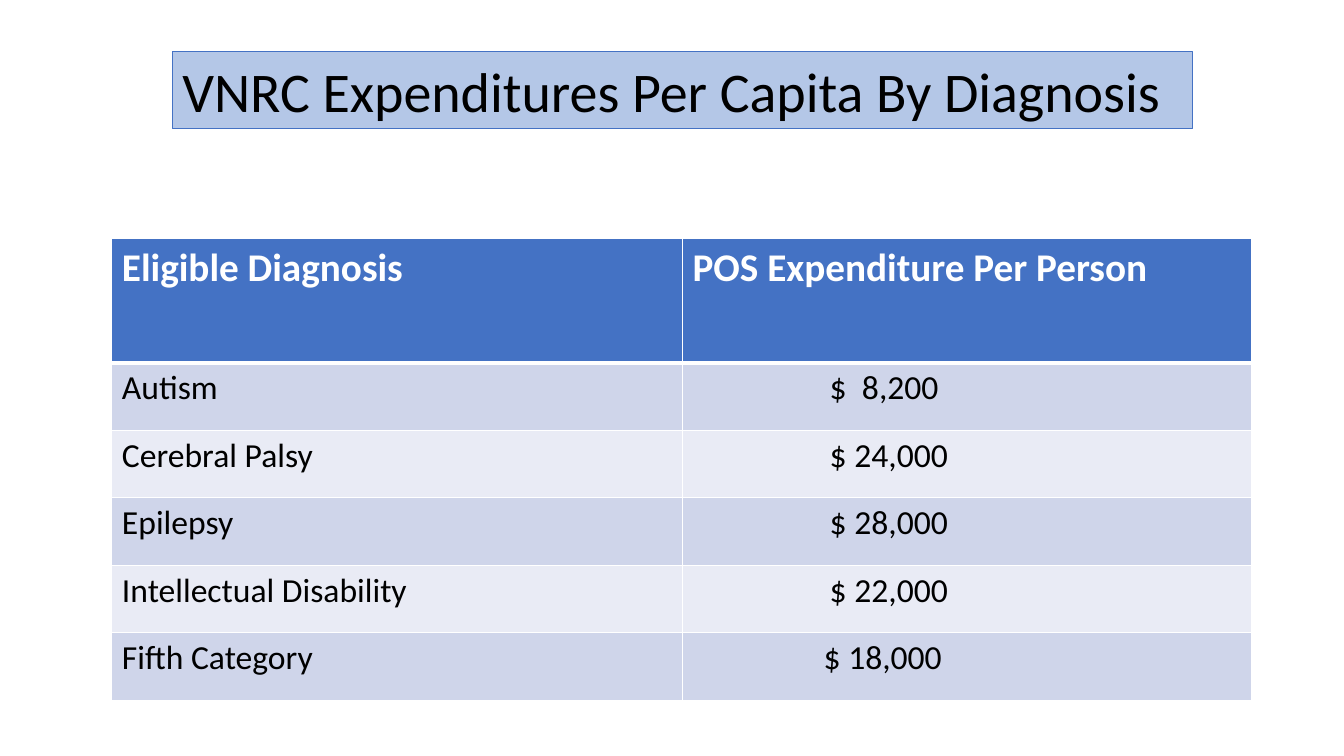
from pptx import Presentation
from pptx.util import Inches, Pt
from pptx.dml.color import RGBColor
from pptx.enum.shapes import MSO_SHAPE as Shape
from pptx.enum.text import MSO_ANCHOR as Anchor, PP_ALIGN as Align
from lxml.etree import SubElement as Sub
from pptx.oxml.ns import qn

TITLE = "VNRC Expenditures Per Capita By Diagnosis"
HEADS = ("Eligible Diagnosis", "POS Expenditure Per Person")
COSTS = [
    ("Autism", "$  8,200", 1.46),
    ("Cerebral Palsy", "$ 24,000", 1.46),
    ("Epilepsy", "$ 28,000", 1.46),
    ("Intellectual Disability", "$ 22,000", 1.46),
    ("Fifth Category", "$ 18,000", 1.4),
]
WIDTHS = (5.66, 5.64)
HEAD_H, ROW_H = 1.23, 0.67
FONT = "Calibri"
BLACK = RGBColor(0x00, 0x00, 0x00)
WHITE = RGBColor(0xFF, 0xFF, 0xFF)
BLUE = RGBColor(0x44, 0x72, 0xC4)
PALE = RGBColor(0xB4, 0xC7, 0xE7)
BANDS = (RGBColor(0xCF, 0xD5, 0xEA), RGBColor(0xE9, 0xEB, 0xF5))


def write(frame, text, size, color, bold=False):
    par = frame.paragraphs[0]
    par.alignment = Align.LEFT
    run = par.add_run()
    run.text = text
    font = run.font
    font.name, font.size, font.bold = FONT, Pt(size), bold
    font.color.rgb = color


def border(cell, top, bottom):
    props = cell._tc.get_or_add_tcPr()
    for side, width in (("L", 1), ("R", 1), ("T", top), ("B", bottom)):
        line = Sub(props, qn(f"a:ln{side}"), w=str(Pt(width)))
        Sub(Sub(line, qn("a:solidFill")), qn("a:srgbClr"), val=str(WHITE))


def paint(cell, color, top=1, bottom=1):
    border(cell, top, bottom)
    cell.fill.solid()
    cell.fill.fore_color.rgb = color


def add_title(slide):
    box = slide.shapes.add_shape(
        Shape.RECTANGLE, Inches(1.71), Inches(0.51), Inches(10.12), Inches(0.77))
    box.shadow.inherit = False
    box.fill.solid()
    box.fill.fore_color.rgb = PALE
    box.line.color.rgb = BLUE
    box.line.width = Pt(0.75)
    frame = box.text_frame
    frame.word_wrap = True
    frame.vertical_anchor = Anchor.TOP
    write(frame, TITLE, 40, BLACK)


def add_costs(slide):
    high = HEAD_H + ROW_H * len(COSTS)
    grid = slide.shapes.add_table(
        len(COSTS) + 1, len(HEADS), Inches(1.11), Inches(2.37),
        Inches(sum(WIDTHS)), Inches(high)).table
    for col, width in zip(grid.columns, WIDTHS):
        col.width = Inches(width)
    for i, row in enumerate(grid.rows):
        row.height = Inches(ROW_H if i else HEAD_H)
    for i, head in enumerate(HEADS):
        cell = grid.cell(0, i)
        paint(cell, BLUE, bottom=3)
        write(cell.text_frame, head, 28, WHITE, True)
    for i, (name, cost, inset) in enumerate(COSTS):
        for j, text in enumerate((name, cost)):
            cell = grid.cell(i + 1, j)
            paint(cell, BANDS[i % 2], top=1 if i else 3)
            write(cell.text_frame, text, 24, BLACK)
        cell.margin_left = Inches(inset)


def main():
    deck = Presentation()
    deck.slide_width, deck.slide_height = Inches(13.33), Inches(7.5)
    slide = deck.slides.add_slide(deck.slide_layouts[6])
    add_title(slide)
    add_costs(slide)
    deck.save("out.pptx")


if __name__ == "__main__":
    main()
